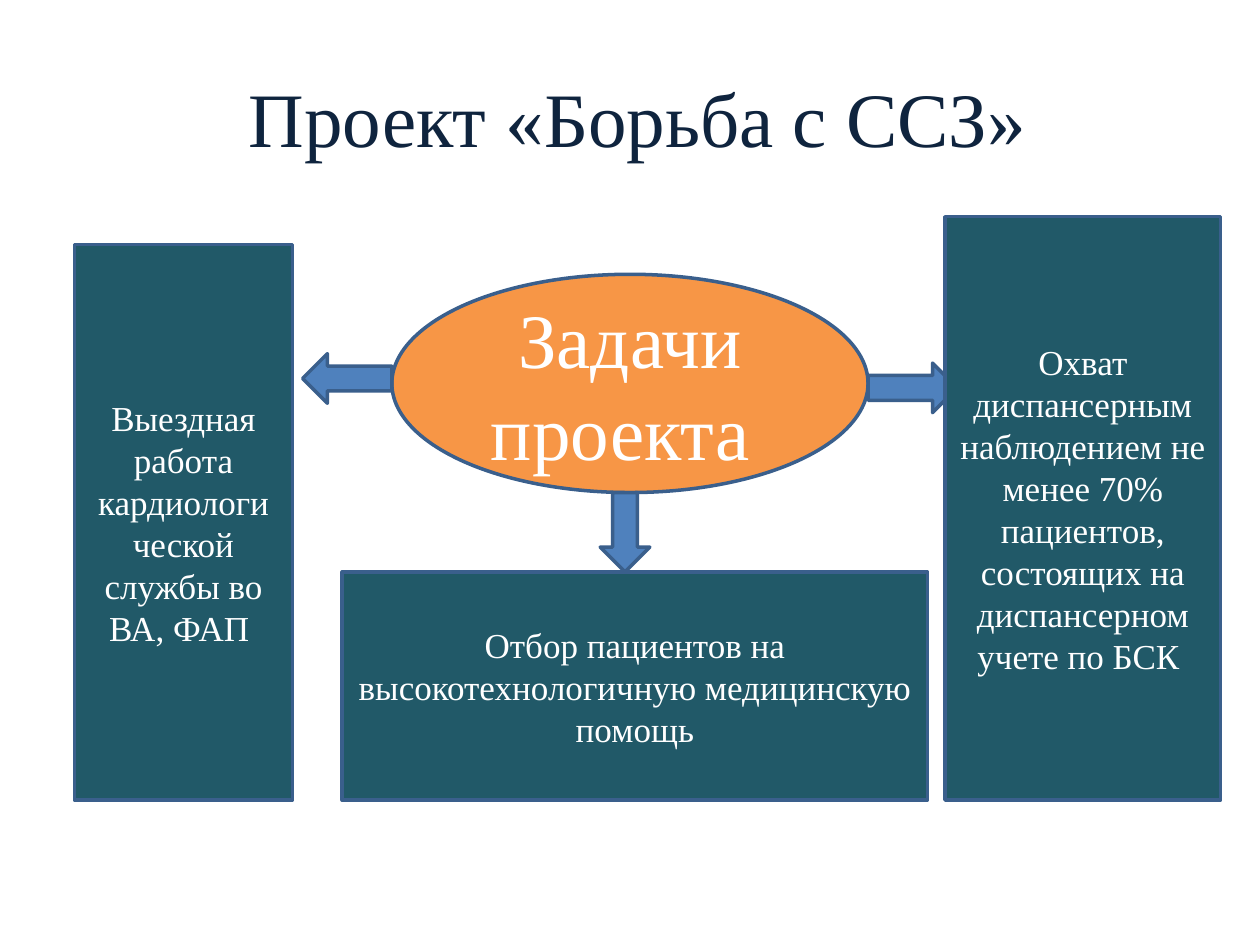
from pptx import Presentation
from pptx.dml.color import RGBColor
from pptx.enum.shapes import MSO_SHAPE as Shape
from pptx.enum.text import MSO_ANCHOR as Anchor, PP_ALIGN as Align
from pptx.util import Cm, Pt

NAVY = RGBColor(0x0F, 0x24, 0x3E)
ORANGE = RGBColor(0xF7, 0x96, 0x46)
TEAL = RGBColor(0x21, 0x59, 0x68)
BLUE = RGBColor(0x4F, 0x81, 0xBD)
OUTLINE = RGBColor(0x3A, 0x5F, 0x8C)
WHITE = RGBColor(0xFF, 0xFF, 0xFF)


class SlideBuilder:
    font = "Times New Roman"
    large = Pt(44)
    body = Pt(20)
    line_width = Pt(2)

    def __init__(self, slide):
        self.slide = slide

    def add_text(self, frame, text, size, color, align):
        frame.word_wrap = True
        frame.vertical_anchor = Anchor.MIDDLE
        paragraph = frame.paragraphs[0]
        paragraph.alignment = align
        run = paragraph.add_run()
        run.text = text
        run.font.name = self.font
        run.font.size = size
        run.font.color.rgb = color

    def title(self, text, left, top, width, height, indent):
        heading = self.slide.shapes.title
        heading.left, heading.top = Cm(left), Cm(top)
        heading.width, heading.height = Cm(width), Cm(height)
        heading.text_frame.margin_left = Cm(indent)
        self.add_text(heading.text_frame, text, self.large, NAVY, Align.LEFT)

    def figure(self, kind, left, top, width, height, fill):
        figure = self.slide.shapes.add_shape(
            kind, Cm(left), Cm(top), Cm(width), Cm(height))
        figure.shadow.inherit = False
        figure.fill.solid()
        figure.fill.fore_color.rgb = fill
        figure.line.color.rgb = OUTLINE
        figure.line.width = self.line_width
        return figure

    def arrow(self, kind, left, top, width, height):
        self.figure(kind, left, top, width, height, BLUE)

    def hub(self, text, left, top, width, height):
        hub = self.figure(Shape.OVAL, left, top, width, height, ORANGE)
        self.add_text(hub.text_frame, text, self.large, WHITE, Align.CENTER)

    def task(self, text, left, top, width, height):
        task = self.figure(Shape.RECTANGLE, left, top, width, height, TEAL)
        self.add_text(task.text_frame, text, self.body, WHITE, Align.CENTER)


def main():
    deck = Presentation()
    deck.slide_width, deck.slide_height = Cm(25.4), Cm(19.05)
    title_only = deck.slide_layouts[5]
    builder = SlideBuilder(deck.slides.add_slide(title_only))

    # Heading
    builder.title("Проект «Борьба с ССЗ»", 1.27, 0.76, 22.86, 3.18, indent=3.74)

    # Central idea
    builder.hub("Задачи проекта ", 7.9, 5.53, 9.6, 4.4)

    # Tasks with the arrows leading to them
    builder.arrow(Shape.RIGHT_ARROW, 17.5, 7.32, 1.8, 1)
    builder.task("Выездная работа кардиологи ческой службы во ВА, ФАП ",
                 1.5, 4.93, 4.4, 11.2)
    builder.arrow(Shape.LEFT_ARROW, 6.1, 7.13, 1.8, 1)
    builder.task("Охват диспансерным наблюдением не менее 70% пациентов, "
                 "состоящих на диспансерном учете по БСК ",
                 19.05, 4.37, 5.56, 11.76)
    builder.arrow(Shape.DOWN_ARROW, 12.1, 9.93, 1, 1.6)
    builder.task("Отбор пациентов на высокотехнологичную медицинскую помощь",
                 6.9, 11.53, 11.8, 4.6)

    deck.save("out.pptx")


if __name__ == "__main__":
    main()
